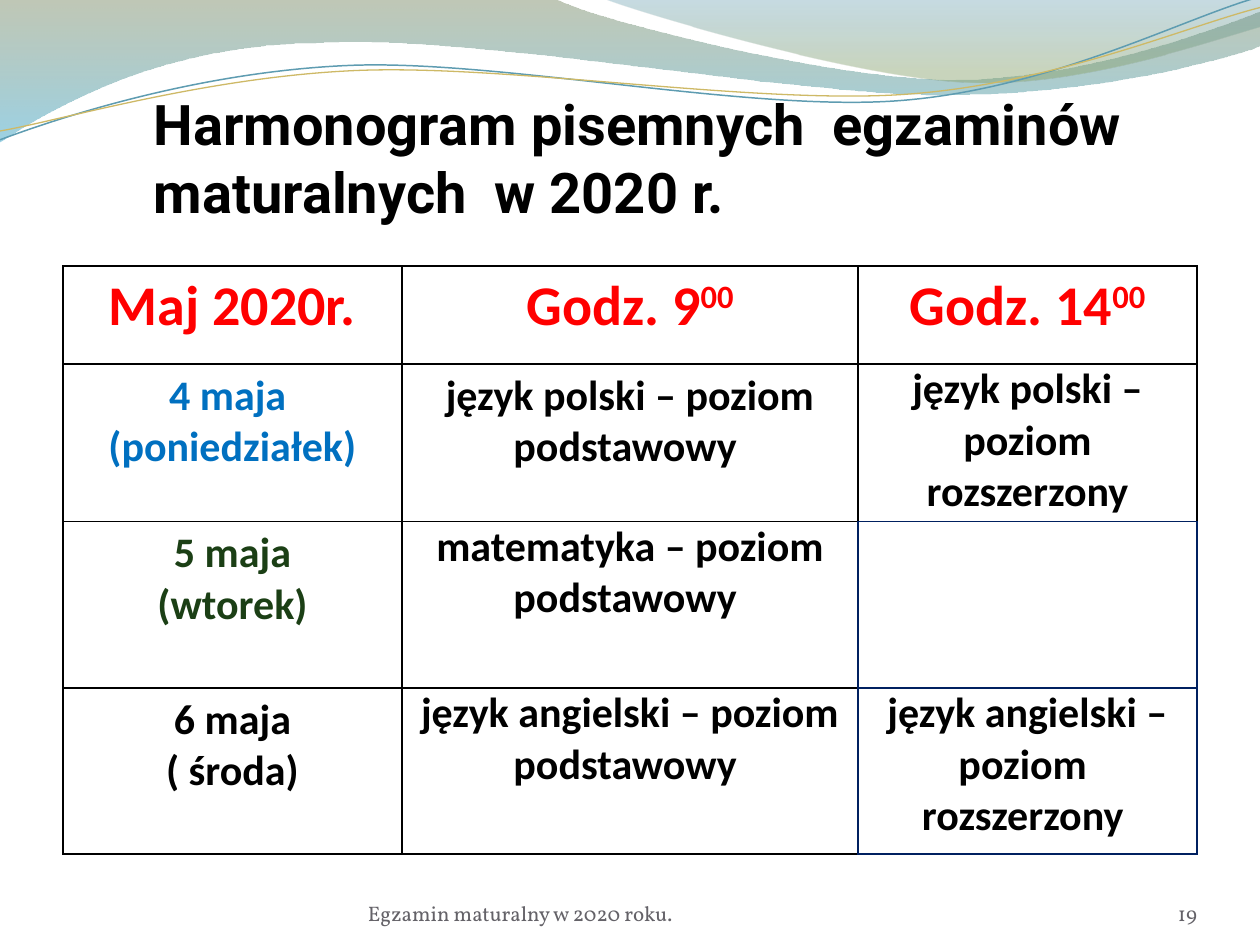
import pptx
import pptx.dml.color
import pptx.enum.text
import pptx.oxml
import pptx.oxml.ns
import pptx.util
from lxml import etree

Inches, Pt, qn = pptx.util.Inches, pptx.util.Pt, pptx.oxml.ns.qn
ALIGN = pptx.enum.text.PP_ALIGN
BLACK, NAVY, RED, GREY = "000000", "002060", "FF0000", "646268"

# Content: each cell is a list of paragraphs, each paragraph a list of runs
TITLE = "Harmonogram pisemnych  egzaminów  maturalnych  w 2020 r."
FOOTER, PAGE = "Egzamin maturalny w 2020 roku.", "19"
ROWS = [
    [[["Maj 2020r."]], [["Godz. 9", "00"]], [["Godz. 14", "00"]]],
    [[["4 maja "], ["(poniedziałek)"]], [["język polski – poziom podstawowy "]],
     [["język polski – poziom rozszerzony"]]],
    [[["5 maja"], ["(wtorek)"]], [["matematyka – poziom podstawowy "]], []],
    [[["6 maja"], ["( środa)"]], [["język angielski – poziom podstawowy "]],
     [["język angielski – poziom "], ["rozszerzony "]]],
]
COL_WIDTHS = [2.69, 3.62, 2.69]
ROW_HEIGHTS = [0.78, 1.25, 1.32, 1.32]
DATE_COLORS = [RED, "0070C0", "1B3F15", BLACK]
NAVY_SIDES = {(1, 2): "B", (2, 1): "R", (2, 2): "LRTB", (3, 1): "R", (3, 2): "LRTB"}
TIGHT_CELLS = [(1, 2), (2, 1), (3, 1), (3, 2)]

# Waves: start point, then line (2 numbers) or Bezier (6 numbers) segments
BANDS = [
    ((0, -0.01),
     [(4.4, -0.01), (4.76, 0.17, 6.64, 0.63, 7.58, 0.63), (8.53, 0.63, 9.58, 0.26, 10, 0.09),
      (10.01, 0.36), (9.83, 0.44, 8.7, 0.76, 7.46, 0.75), (6.22, 0.75, 3.82, 0.28, 2.57, 0.34),
      (1.29, 0.35, 0.46, 0.83, -0.01, 1.13), (0, -0.01)],
     [(0, "74855E", 45), (1, "4AACCE", 55)]),
    ((4.79, -0.01),
     [(5.09, 0.11, 6.82, 0.62, 7.69, 0.65), (8.56, 0.69, 9.61, 0.32, 10, 0.21), (10, 0),
      (4.79, -0.01)],
     [(0, "45889F", 30), (0.8, "8AA36D", 45)]),
]
LINES = [
    ((0, 1.11),
     [(0.48, 0.93, 1.58, 0.57, 2.77, 0.52), (3.95, 0.47, 5.93, 0.89, 7.13, 0.8),
      (8.33, 0.71, 9.38, 0.15, 9.98, -0.02)], "5E9CB1", 0.85),
    ((0, 1.04),
     [(0.47, 0.96, 1.64, 0.61, 2.83, 0.56), (4.03, 0.51, 5.97, 0.83, 7.17, 0.75),
      (8.36, 0.67, 9.41, 0.21, 10, 0.06)], "CEB966", 0.75),
]


def rgb(color):
    return pptx.dml.color.RGBColor.from_string(color)


def add_wave(start, segments, close):
    points = [tuple(map(Inches, seg[k:k + 2])) for seg in segments for k in range(0, len(seg), 2)]
    fb = s.shapes.build_freeform(*map(Inches, start), scale=1.0)
    fb.add_line_segments(points, close=close)
    sp = fb.convert_to_shape()
    sp.shadow.inherit = False
    # Join each run of three points into one Bezier segment
    nodes = iter(list(sp._element.spPr.iter(qn("a:lnTo"))))
    for seg in segments:
        group = [next(nodes) for _ in range(len(seg) // 2)]
        if len(group) == 3:
            group[0].tag = qn("a:cubicBezTo")
            for node in group[1:]:
                group[0].append(node[0])
                node.getparent().remove(node)
    return sp


def add_run(p, text, font, size, color, bold):
    r = p.add_run()
    r.text = text
    for name, value in {"name": font, "size": Pt(size), "bold": bold}.items():
        setattr(r.font, name, value)
    r.font.color.rgb = rgb(color)
    return r


def add_text(box, text, font, size, color, bold=False, align=ALIGN.LEFT, top=0):
    tf = s.shapes.add_textbox(*map(Inches, box)).text_frame
    settings = {"word_wrap": True, "vertical_anchor": pptx.enum.text.MSO_ANCHOR.BOTTOM,
                "margin_left": 0, "margin_right": 0, "margin_bottom": 0,
                "margin_top": Inches(top)}
    for name, value in settings.items():
        setattr(tf, name, value)
    tf.paragraphs[0].alignment = align
    add_run(tf.paragraphs[0], text, font, size, color, bold)


def set_borders(cell, navy):
    tc_pr = cell._tc.get_or_add_tcPr()
    for i, side in enumerate("LRTB"):
        color = NAVY if side in navy else BLACK
        tc_pr.insert(i, pptx.oxml.parse_xml(
            f'<a:ln{side} xmlns:a="http://schemas.openxmlformats.org/drawingml/2006/main" '
            f'w="{Pt(1)}"><a:solidFill><a:srgbClr val="{color}"/></a:solidFill></a:ln{side}>'))


prs = pptx.Presentation()
prs.slide_width, prs.slide_height = Inches(10), Inches(7.5)
s = prs.slides.add_slide(prs.slide_layouts[6])

# Gradient bands
for start, segments, stops in BANDS:
    sp = add_wave(start, segments, True)
    sp.line.fill.background()
    sp.fill.gradient()
    sp.fill.gradient_angle = 270
    for stop, (position, color, alpha) in zip(sp.fill.gradient_stops, stops):
        stop.position = position
        stop.color.rgb = rgb(color)
    for clr, (_, _, alpha) in zip(sp._element.spPr.iter(qn("a:srgbClr")), stops):
        etree.SubElement(clr, qn("a:alpha"), val=str(alpha * 1000))

# Thin wave lines
for start, segments, color, width in LINES:
    sp = add_wave(start, segments, False)
    sp.fill.background()
    sp.line.color.rgb = rgb(color)
    sp.line.width = Pt(width)

add_text((1.22, 0.23, 8.28, 1.55), TITLE, "Roboto", 32, BLACK, bold=True, top=0.05)

# Timetable
table = s.shapes.add_table(len(ROWS), len(COL_WIDTHS), Inches(0.5), Inches(2.11),
                           Inches(sum(COL_WIDTHS)), Inches(sum(ROW_HEIGHTS))).table
table.first_row = table.horz_banding = False
for col, width in zip(table.columns, COL_WIDTHS):
    col.width = Inches(width)
for row, height in zip(table.rows, ROW_HEIGHTS):
    row.height = Inches(height)
for i, row in enumerate(ROWS):
    for j, paragraphs in enumerate(row):
        cell = table.cell(i, j)
        set_borders(cell, NAVY_SIDES.get((i, j), ""))
        if i == 3:
            cell.fill.solid()
            cell.fill.fore_color.rgb = rgb("FFFFFF")
        else:
            cell.fill.background()
        if (i, j) in TIGHT_CELLS:
            cell.margin_left = cell.margin_right = Inches(0.07)
            cell.margin_top = cell.margin_bottom = 0
        color = DATE_COLORS[i] if i == 0 or j == 0 else BLACK
        tf = cell.text_frame
        for n, runs in enumerate(paragraphs):
            p = tf.add_paragraph() if n else tf.paragraphs[0]
            p.alignment = ALIGN.CENTER
            for k, text in enumerate(runs):
                r = add_run(p, text, "Calibri", 24 if i else 32, color, True)
                if k:  # minutes are superscript
                    r.font._element.set("baseline", "30000")

# Footer and page number
add_text((8.67, 6.95, 0.83, 0.4), PAGE, "Vollkorn", 12, GREY, align=ALIGN.RIGHT)
add_text((2.92, 6.95, 3.67, 0.4), FOOTER, "Vollkorn", 12, GREY)

prs.save("out.pptx")
